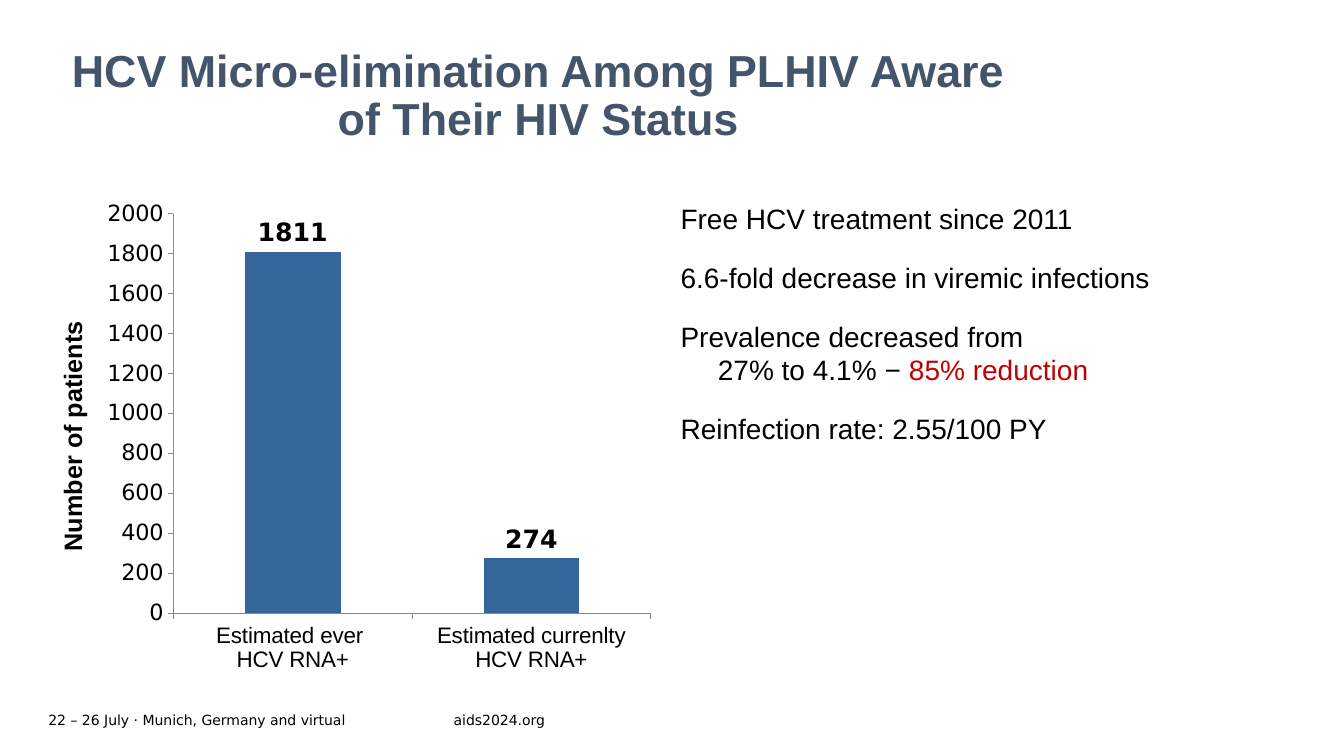
from lxml.etree import SubElement
from pptx import Presentation
from pptx.chart.data import CategoryChartData
from pptx.dml.color import RGBColor
from pptx.enum.chart import XL_CHART_TYPE as ChartType, XL_LABEL_POSITION as LabelPosition
from pptx.enum.chart import XL_TICK_MARK as TickMark
from pptx.enum.text import MSO_ANCHOR as Anchor, PP_ALIGN as Align
from pptx.oxml import parse_xml
from pptx.oxml.ns import nsdecls, qn
from pptx.util import Inches, Pt

COLORS = {"text": "000000", "title": "44546A", "bar": "336699",
          "accent": "C00000", "axis": "888888"}
BODY_FONT, SANS_FONT = "Arial", "DejaVu Sans"


class SlideBuilder:
    def __init__(self, slide):
        self.slide = slide

    def style(self, font, size, color="text", bold=False, name=BODY_FONT):
        font.name, font.size, font.bold = name, Pt(size), bold
        font.color.rgb = RGBColor.from_string(COLORS[color])

    def frame(self, box, anchor=Anchor.TOP):
        """Add a text box without margins and return its text frame."""
        frame = self.slide.shapes.add_textbox(*map(Inches, box)).text_frame
        frame.word_wrap = True
        frame.vertical_anchor = anchor
        frame.margin_left = frame.margin_right = frame.margin_top = frame.margin_bottom = 0
        return frame

    def title(self, box, text):
        frame = self.frame(box)
        frame.text = text
        heading = frame.paragraphs[0]
        heading.alignment = Align.CENTER
        heading.line_spacing = 0.9
        self.style(heading.runs[0].font, 32, "title", bold=True)

    def footer(self, box, text):
        frame = self.frame(box, Anchor.MIDDLE)
        frame.text = text
        self.style(frame.paragraphs[0].runs[0].font, 10, name=SANS_FONT)

    def findings(self, box, items):
        """Add hanging paragraphs from (text, highlighted ending) pairs."""
        frame = self.frame(box)
        for index, (text, highlight) in enumerate(items):
            finding = frame.add_paragraph() if index else frame.paragraphs[0]
            finding.text = text
            if index:
                finding.space_before = Pt(18)
            properties = finding._p.get_or_add_pPr()
            properties.set("marL", str(Inches(0.37)))
            properties.set("indent", str(-Inches(0.37)))
            SubElement(properties, qn("a:buNone"))
            for run in finding.runs:
                self.style(run.font, 20)
            if highlight:
                ending = finding.add_run()
                ending.text = highlight
                self.style(ending.font, 20, "accent")

    def column_chart(self, box, values, axis_title):
        data = CategoryChartData()
        data.categories = list(values)
        data.add_series("Series 1", list(values.values()))
        chart = self.slide.shapes.add_chart(
            ChartType.COLUMN_CLUSTERED, *map(Inches, box), data).chart
        chart.has_legend = chart.has_title = False
        self.style(chart.font, 18, name=SANS_FONT)

        patients, groups = chart.value_axis, chart.category_axis
        for axis, font_name in ((patients, SANS_FONT), (groups, BODY_FONT)):
            axis.has_major_gridlines = False
            axis.major_tick_mark = TickMark.OUTSIDE
            axis.minor_tick_mark = TickMark.NONE
            axis.format.line.color.rgb = RGBColor.from_string(COLORS["axis"])
            axis.format.line.width = Pt(0.75)
            self.style(axis.tick_labels.font, 16, name=font_name)
        patients.minimum_scale, patients.maximum_scale, patients.major_unit = 0, 2000, 200
        title_frame = patients.axis_title.text_frame
        title_frame.text = axis_title
        self.style(title_frame.paragraphs[0].runs[0].font, 18, bold=True)

        plot = chart.plots[0]
        plot.gap_width = 150
        plot.vary_by_categories = False
        bars = plot.series[0].format.fill
        bars.solid()
        bars.fore_color.rgb = RGBColor.from_string(COLORS["bar"])
        plot.has_data_labels = True
        labels = plot.data_labels
        labels.show_value = True
        labels.position = LabelPosition.OUTSIDE_END
        self.style(labels.font, 18, bold=True, name=SANS_FONT)
        self.place_plot(chart, x=0.22, y=0.04, w=0.76, h=0.82)

    def place_plot(self, chart, **fractions):
        """Fix the inner plot area as fractions of the chart."""
        area = chart._chartSpace.chart.plotArea
        for layout in area.findall(qn("c:layout")):
            area.remove(layout)
        sizes = "".join(f'<c:{key} val="{value}"/>' for key, value in fractions.items())
        area.insert(0, parse_xml(
            f'<c:layout {nsdecls("c")}><c:manualLayout><c:layoutTarget val="inner"/>'
            f'<c:xMode val="edge"/><c:yMode val="edge"/>{sizes}'
            '</c:manualLayout></c:layout>'))


def main():
    deck = Presentation()
    deck.slide_width, deck.slide_height = Inches(13.33), Inches(7.5)
    builder = SlideBuilder(deck.slides.add_slide(deck.slide_layouts[6]))

    builder.footer((0.48, 7.02, 4.02, 0.24), "22 – 26 July · Munich, Germany and virtual")
    builder.footer((4.5, 7.02, 1.93, 0.24), "aids2024.org")
    builder.title((0.48, 0.48, 9.72, 1.34),
                  "HCV Micro-elimination Among PLHIV Aware of Their HIV Status")
    builder.column_chart((0.35, 1.93, 6.23, 4.83),
                         {"Estimated ever \nHCV RNA+": 1811,
                          "Estimated currenlty HCV RNA+": 274},
                         "Number of patients")
    builder.findings((6.75, 2, 5.67, 4.76), [
        ("Free HCV treatment since 2011", ""),
        ("6.6-fold decrease in viremic infections", ""),
        ("Prevalence decreased from \n27% to 4.1% − ", "85% reduction"),
        ("Reinfection rate: 2.55/100 PY", ""),
    ])
    deck.save("out.pptx")


if __name__ == "__main__":
    main()
